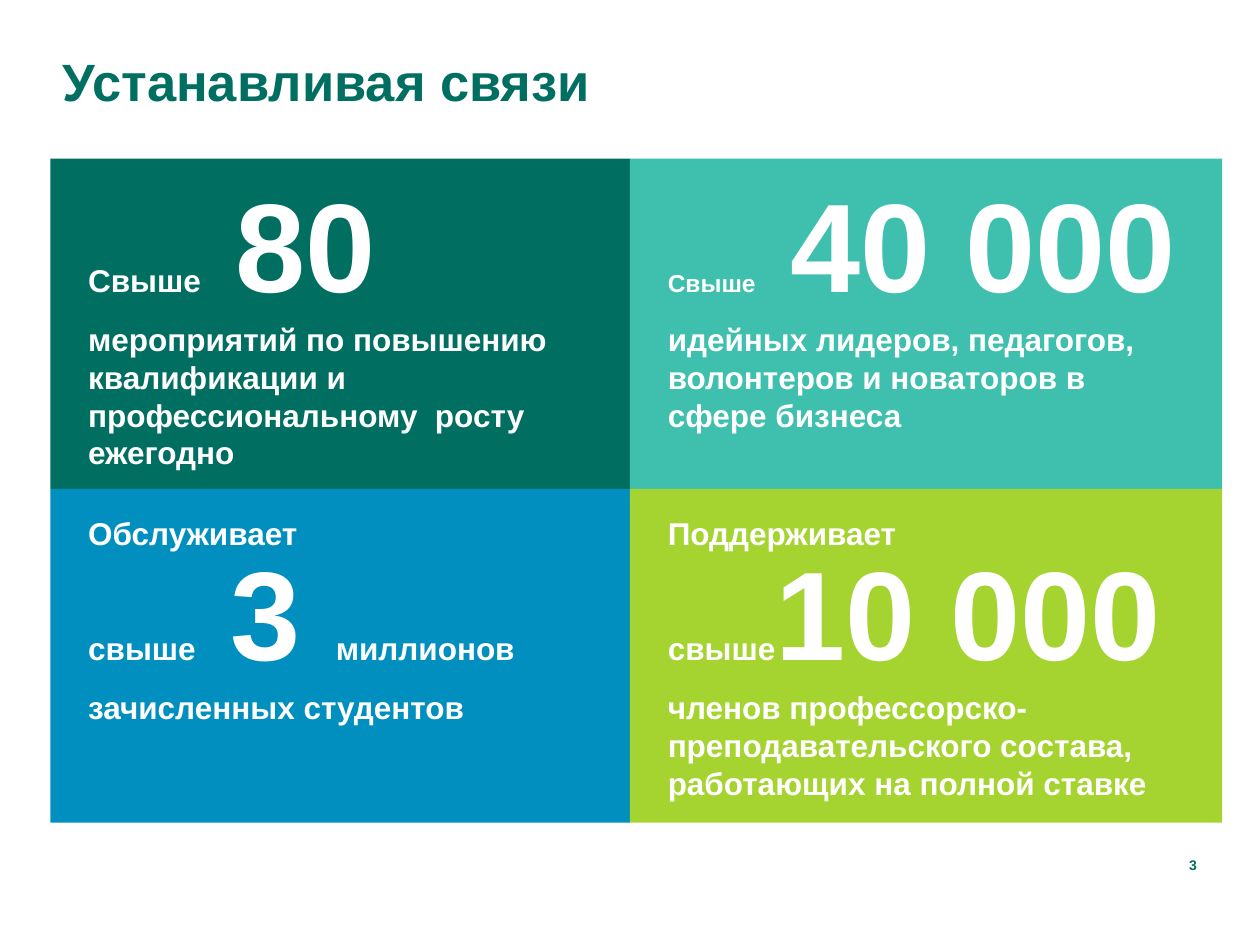
from dataclasses import dataclass

from pptx import Presentation
from pptx.dml.color import RGBColor
from pptx.enum.shapes import MSO_SHAPE
from pptx.enum.text import MSO_ANCHOR, PP_ALIGN
from pptx.util import Inches, Pt


@dataclass(frozen=True)
class Theme:
    face: str = "Arial"
    pine: str = "006E61"
    mint: str = "3FBFAD"
    blue: str = "008FBE"
    lime: str = "A5D330"
    white: str = "FFFFFF"
    title: int = 30
    huge: int = 72
    body: int = 18
    small: int = 14
    page: int = 8


THEME = Theme()


def style(font, size, color):
    font.name = THEME.face
    font.size = Pt(size)
    font.bold = True
    font.color.rgb = RGBColor.from_string(color)


def set_frame(frame, anchor, left=0, top=0, right=0, bottom=0):
    frame.word_wrap = True
    frame.vertical_anchor = anchor
    frame.margin_left = Inches(left)
    frame.margin_top = Inches(top)
    frame.margin_right = Inches(right)
    frame.margin_bottom = Inches(bottom)


def add_label(slide, box, text, size, anchor, align):
    frame = slide.shapes.add_textbox(*map(Inches, box)).text_frame
    set_frame(frame, anchor)
    para = frame.paragraphs[0]
    para.text = text
    para.alignment = align
    para.line_spacing = 0.9
    style(para.font, size, THEME.pine)


def add_tile(slide, box, color, lines):
    tile = slide.shapes.add_shape(MSO_SHAPE.RECTANGLE, *map(Inches, box))
    tile.shadow.inherit = False
    tile.fill.solid()
    tile.fill.fore_color.rgb = RGBColor.from_string(color)
    tile.line.fill.background()
    frame = tile.text_frame
    set_frame(frame, MSO_ANCHOR.TOP, 0.3, 0.2, 0.3, 0.05)
    for index, runs in enumerate(lines):
        para = frame.add_paragraph() if index else frame.paragraphs[0]
        para.alignment = PP_ALIGN.LEFT
        style(para.font, THEME.body, THEME.white)
        if len(runs) > 1:
            para.line_spacing = 0.9
        for text, size in runs:
            run = para.add_run()
            run.text = text
            style(run.font, size, THEME.white)


def main():
    deck = Presentation()
    deck.slide_width, deck.slide_height = Inches(10), Inches(7.5)
    slide = deck.slides.add_slide(deck.slide_layouts[6])
    add_label(slide, (0.5, 0, 9, 1.34), "Устанавливая связи",
              THEME.title, MSO_ANCHOR.MIDDLE, PP_ALIGN.LEFT)
    add_label(slide, (8.84, 6.76, 0.66, 0.17), "3",
              THEME.page, MSO_ANCHOR.BOTTOM, PP_ALIGN.RIGHT)

    huge, body, small = THEME.huge, THEME.body, THEME.small
    tiles = [
        (THEME.pine, [
            [("Свыше", body), (" 80", huge)],
            [("мероприятий по повышению квалификации и "
              "профессиональному  росту ежегодно", body)]]),
        (THEME.mint, [
            [("Свыше", small), (" 40 000", huge)],
            [("идейных лидеров, педагогов, волонтеров и новаторов "
              "в сфере бизнеса", body)]]),
        (THEME.blue, [
            [("Обслуживает", body)],
            [("свыше", body), (" 3 ", huge), ("миллионов", body)],
            [("зачисленных студентов", body)]]),
        (THEME.lime, [
            [("Поддерживает", body)],
            [("свыше", body), ("10 000", huge)],
            [("членов профессорско-преподавательского состава, "
              "работающих на полной ставке", body)]]),
    ]
    cols = [(0.4, 4.6), (5, 4.7)]
    rows = [(1.26, 2.62), (3.88, 2.65)]
    for index, (color, lines) in enumerate(tiles):
        left, width = cols[index % 2]
        top, height = rows[index // 2]
        add_tile(slide, (left, top, width, height), color, lines)
    deck.save("out.pptx")


if __name__ == "__main__":
    main()
